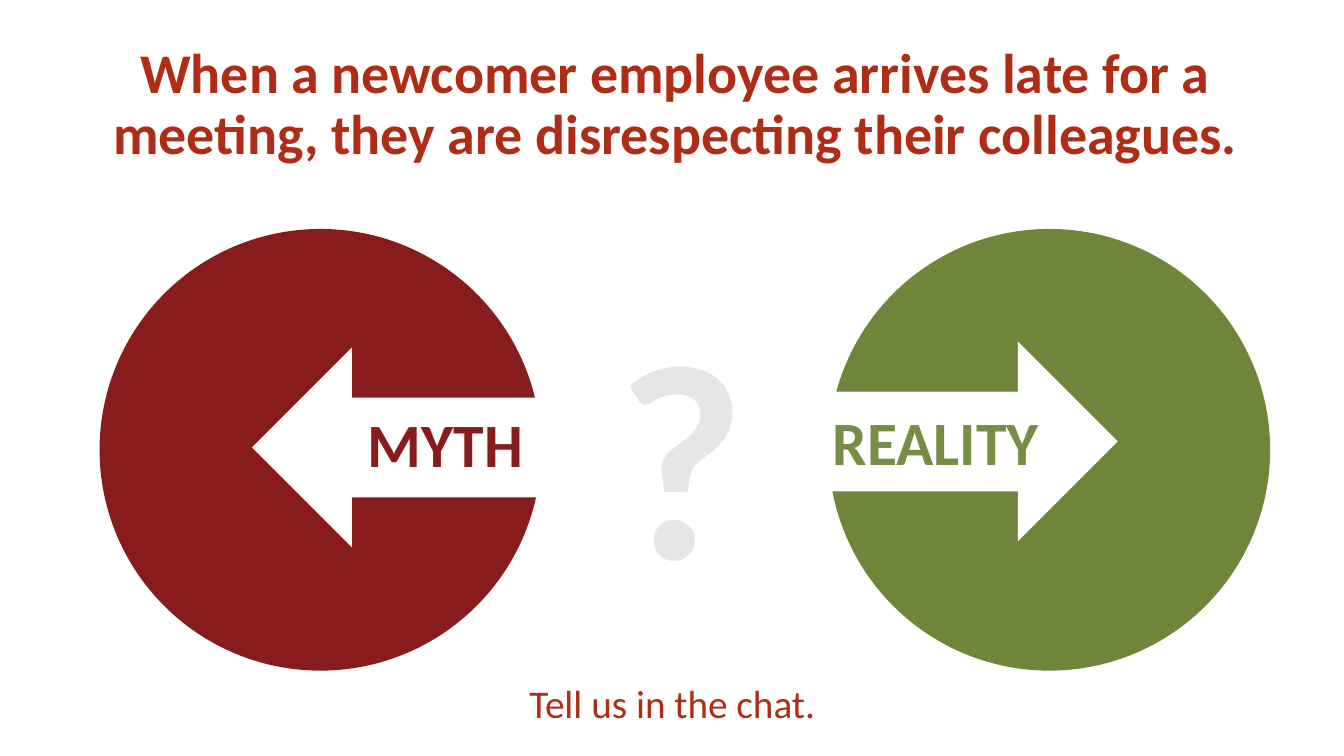
from dataclasses import dataclass

from pptx import Presentation
from pptx.dml.color import RGBColor
from pptx.enum import shapes, text
from pptx.util import Cm, Pt

TITLE = ("When a newcomer employee arrives late for a meeting, "
         "they are disrespecting their colleagues.")
TITLE_BOX = (2.51, 1.04, 29.01, 3.25)


@dataclass(frozen=True)
class Theme:
    font: str = "Calibri"
    accent: str = "B02D15"
    myth: str = "881C1C"
    reality: str = "6E853A"
    reality_text: str = "778D46"
    pale: str = "E6E6E6"
    white: str = "FFFFFF"
    title_size: int = 40
    label_size: int = 44
    mark_size: int = 199
    prompt_size: int = 28


THEME = Theme()
DISC_TOP, DISC_SIZE = 5.77, 11.13
ARROW_SIZE = (7.44, 5.03)

# Disc left, disc colour, arrow left and top, arrow rotation
CHOICES = [
    (20.88, THEME.reality, (20.73, 8.61), 0),
    (2.51, THEME.myth, (6.35, 8.76), 180),
]

# Wording, box, size, colour, bold, centred
TEXTS = [
    ("MYTH", (9.02, 10.11, 4.47, 2.13), THEME.label_size, THEME.myth, True, False),
    ("REALITY", (20.73, 10.06, 5.77, 2.13), THEME.label_size, THEME.reality_text, True, False),
    ("?", (14.66, 6.96, 5.03, 8.76), THEME.mark_size, THEME.pale, True, True),
    ("Tell us in the chat.", (9.7, 16.99, 14.48, 1.45), THEME.prompt_size, THEME.accent, False, True),
]


def lengths(box):
    return [Cm(value) for value in box]


def format_paragraph(paragraph, size, color, bold, centred):
    paragraph.alignment = text.PP_ALIGN.CENTER if centred else text.PP_ALIGN.LEFT
    font = paragraph.font
    font.name, font.size, font.bold = THEME.font, Pt(size), bold
    font.color.rgb = RGBColor.from_string(color)


def add_title(slide):
    title = slide.shapes.title
    title.left, title.top, title.width, title.height = lengths(TITLE_BOX)
    frame = title.text_frame
    frame.text = TITLE
    frame.word_wrap = True
    frame.auto_size = text.MSO_AUTO_SIZE.NONE
    frame.vertical_anchor = text.MSO_ANCHOR.MIDDLE
    paragraph = frame.paragraphs[0]
    paragraph.line_spacing = 0.9
    format_paragraph(paragraph, THEME.title_size, THEME.accent, True, True)


def add_filled(slide, kind, box, color):
    shape = slide.shapes.add_shape(kind, *lengths(box))
    shape.shadow.inherit = False
    shape.fill.solid()
    shape.fill.fore_color.rgb = RGBColor.from_string(color)
    shape.line.fill.background()
    return shape


def add_text(slide, wording, box, size, color, bold, centred):
    frame = slide.shapes.add_textbox(*lengths(box)).text_frame
    frame.text = wording
    frame.word_wrap = centred
    frame.auto_size = text.MSO_AUTO_SIZE.SHAPE_TO_FIT_TEXT
    format_paragraph(frame.paragraphs[0], size, color, bold, centred)


def main():
    presentation = Presentation()
    presentation.slide_width, presentation.slide_height = Cm(33.87), Cm(19.05)
    slide = presentation.slides.add_slide(presentation.slide_layouts[5])
    for disc_left, color, arrow_corner, rotation in CHOICES:
        disc_box = (disc_left, DISC_TOP, DISC_SIZE, DISC_SIZE)
        add_filled(slide, shapes.MSO_SHAPE.OVAL, disc_box, color)
        arrow = add_filled(slide, shapes.MSO_SHAPE.RIGHT_ARROW,
                           arrow_corner + ARROW_SIZE, THEME.white)
        arrow.rotation = rotation
    add_title(slide)
    for entry in TEXTS:
        add_text(slide, *entry)
    presentation.save("out.pptx")


if __name__ == "__main__":
    main()
